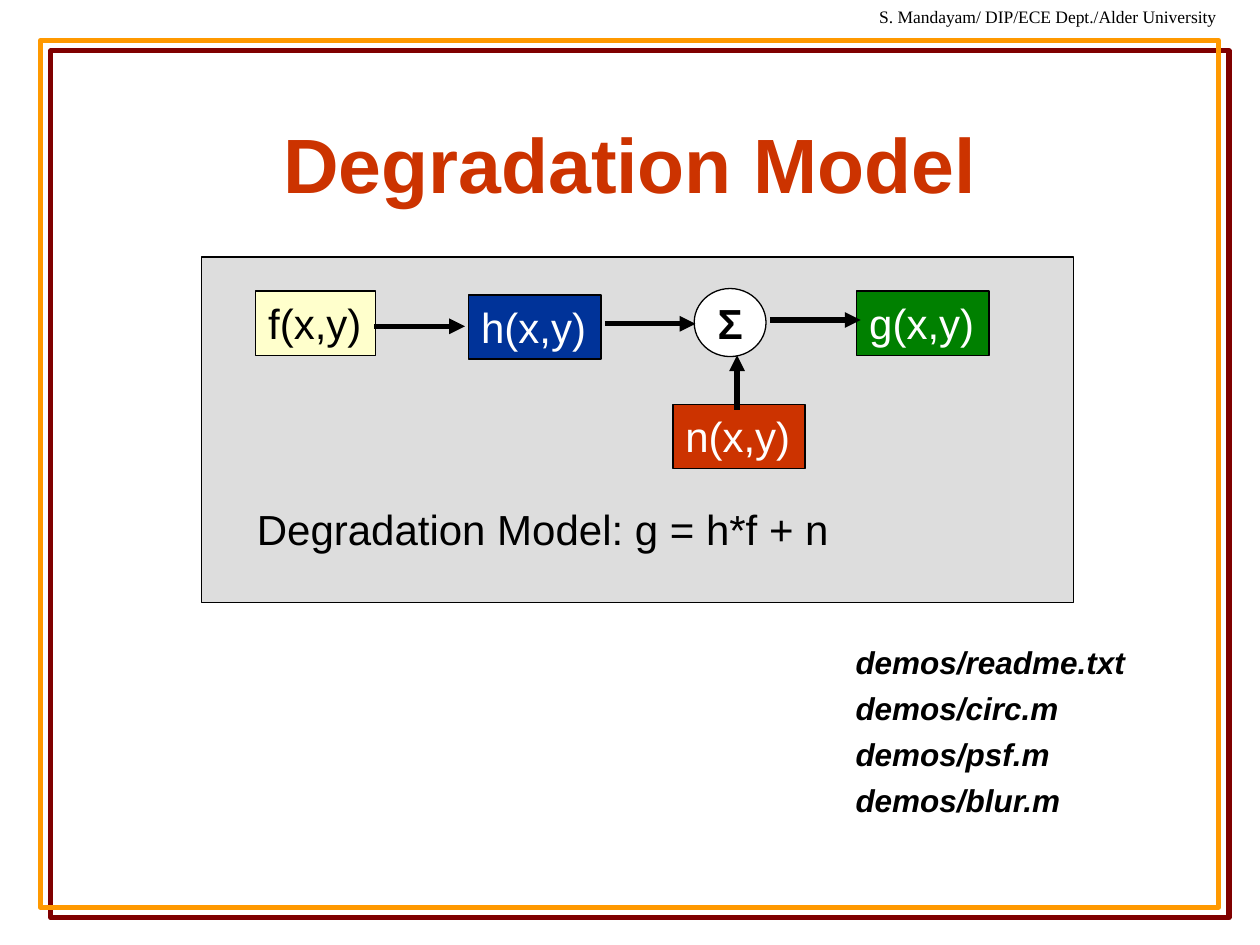
from lxml import etree
from pptx import Presentation
from pptx.dml.color import RGBColor
from pptx.enum.shapes import MSO_CONNECTOR, MSO_SHAPE
from pptx.enum.text import MSO_ANCHOR, PP_ALIGN
from pptx.oxml import parse_xml
from pptx.oxml.ns import nsdecls, qn
from pptx.util import Inches, Pt

RECTANGLE, OVAL = MSO_SHAPE.RECTANGLE, MSO_SHAPE.OVAL
STRAIGHT = MSO_CONNECTOR.STRAIGHT
TOP, MIDDLE = MSO_ANCHOR.TOP, MSO_ANCHOR.MIDDLE
LEFT, CENTER = PP_ALIGN.LEFT, PP_ALIGN.CENTER
BLACK, WHITE, RED = "000000", "FFFFFF", "CC3300"
TITLE_ONLY = 5

# text, left, top, width, fill, text colour
SIGNALS = [
    ("f(x,y)", 2.03, 2.31, 0.95, "FFFFCC", BLACK),
    ("h(x,y)", 3.72, 2.34, 1.05, "003399", WHITE),
    ("g(x,y)", 6.8, 2.31, 1.05, "008000", WHITE),
    ("n(x,y)", 5.34, 3.21, 1.05, RED, WHITE),
]
# start x, start y, end x, end y
ARROWS = [
    (2.97, 2.59, 3.69, 2.59),
    (4.8, 2.57, 5.52, 2.57),
    (5.85, 3.25, 5.85, 2.82),
    (6.11, 2.54, 6.83, 2.54),
]
DEMOS = ["demos/readme.txt", "demos/circ.m", "demos/psf.m", "demos/blur.m"]


def rgb(color):
    return RGBColor.from_string(color)


def write(shape, lines, size, color=BLACK, name="Arial", bold=False, italic=False,
          align=LEFT, anchor=TOP, wrap=False, gap=0):
    """Fill a shape with one paragraph per line, gap points apart."""
    frame = shape.text_frame
    frame.word_wrap = wrap
    frame.vertical_anchor = anchor
    frame.text = "\n".join(lines)
    for paragraph in frame.paragraphs:
        paragraph.alignment = align
        paragraph.space_after = Pt(gap)
        font = paragraph.font
        font.name, font.size = name, Pt(size)
        font.bold, font.italic = bold, italic
        font.color.rgb = rgb(color)


def add_box(slide, kind, bounds, fill=None, line=BLACK, weight=0.75):
    shape = slide.shapes.add_shape(kind, *map(Inches, bounds))
    shape.shadow.inherit = False
    if fill:
        shape.fill.solid()
        shape.fill.fore_color.rgb = rgb(fill)
    else:
        shape.fill.background()
    shape.line.color.rgb = rgb(line)
    shape.line.width = Pt(weight)
    return shape


def add_text(slide, bounds, lines, size, **style):
    box = slide.shapes.add_textbox(*map(Inches, bounds))
    write(box, lines, size, **style)
    return box


def add_arrow(slide, *ends):
    arrow = slide.shapes.add_connector(STRAIGHT, *map(Inches, ends))
    arrow.line.color.rgb = rgb(BLACK)
    arrow.line.width = Pt(3)
    etree.SubElement(arrow.line._get_or_add_ln(), qn("a:tailEnd"), type="triangle")
    etree.SubElement(arrow._element.spPr, qn("a:effectLst"))


def add_frame(slide):
    """Orange page border with a hard dark red shadow down to the right."""
    frame = add_box(slide, RECTANGLE, (0.32, 0.32, 9.35, 6.88), line="FF9900", weight=3)
    effects = frame._element.spPr.find(qn("a:effectLst"))
    effects.append(parse_xml(
        f'<a:outerShdw {nsdecls("a")} dist="{Pt(8.5)}" dir="2700000" algn="ctr" '
        'rotWithShape="0"><a:srgbClr val="800000"/></a:outerShdw>'))


def add_title(slide, text):
    title = slide.shapes.title
    title.left, title.top = Inches(0.75), Inches(0.67)
    title.width, title.height = Inches(8.5), Inches(1.25)
    write(title, [text], 44, RED, bold=True, align=CENTER, anchor=MIDDLE, wrap=True)


def add_diagram(slide):
    add_box(slide, RECTANGLE, (1.6, 2.04, 6.92, 2.74), "DDDDDD")
    for text, left, top, width, fill, color in SIGNALS:
        box = add_box(slide, RECTANGLE, (left, top, width, 0.51), fill)
        write(box, [text], 24, color)
    adder = add_box(slide, OVAL, (5.51, 2.29, 0.57, 0.54), WHITE)
    write(adder, ["Σ"], 24, bold=True, align=CENTER, anchor=MIDDLE)
    for ends in ARROWS:
        add_arrow(slide, *ends)
    add_text(slide, (1.94, 3.95, 4.74, 0.5), ["Degradation Model: g = h*f + n"], 24)


def main():
    presentation = Presentation()
    presentation.slide_width, presentation.slide_height = Inches(10), Inches(7.5)
    slide = presentation.slides.add_slide(presentation.slide_layouts[TITLE_ONLY])
    add_frame(slide)
    add_text(slide, (6.88, 0, 2.97, 0.27),
             ["S. Mandayam/ DIP/ECE Dept./Alder University"], 10, name="Times New Roman")
    add_title(slide, "Degradation Model")
    add_diagram(slide)
    demos = add_text(slide, (6.19, 5.05, 2.87, 2.22), DEMOS, 18,
                     bold=True, italic=True, wrap=True, gap=4.7)
    demos.text_frame.margin_left = Inches(0.6)
    presentation.save("out.pptx")


if __name__ == "__main__":
    main()
